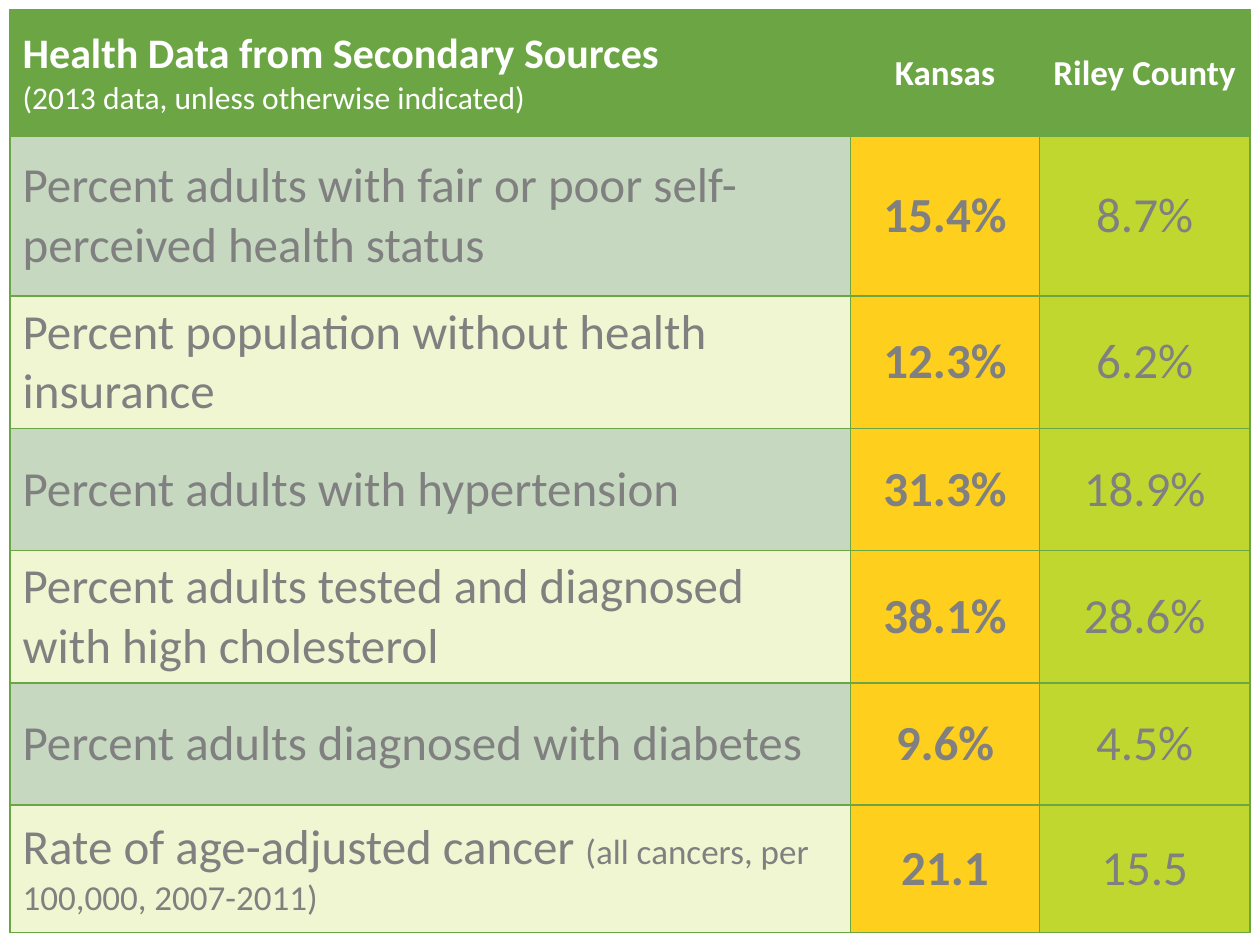
from lxml import etree
from pptx import Presentation
from pptx.dml.color import RGBColor
from pptx.enum.text import MSO_ANCHOR as ANCHOR, PP_ALIGN as ALIGN
from pptx.oxml.ns import qn
from pptx.util import Inches, Pt

GREEN = RGBColor(0x6C, 0xA6, 0x44)
SAGE = RGBColor(0xC7, 0xD8, 0xC1)
CREAM = RGBColor(0xF1, 0xF6, 0xD2)
GOLD = RGBColor(0xFF, 0xCF, 0x1D)
LIME = RGBColor(0xC0, 0xD7, 0x30)
GRAY = RGBColor(0x80, 0x80, 0x80)
WHITE = RGBColor(0xFF, 0xFF, 0xFF)

COLS = [6.67, 1.5, 1.67]
ROWS = [1, 1.27] + [0.97] * 4 + [1.01]
MARGIN = 0.08

HEADER = ["Health Data from Secondary Sources", "Kansas", "Riley County"]
HEADER_NOTE = "(2013 data, unless otherwise indicated)"
MEASURES = [
    ["Percent adults with fair or poor self- perceived health status", "15.4%", "8.7%"],
    ["Percent population without health insurance", "12.3%", "6.2%"],
    ["Percent adults with hypertension", "31.3%", "18.9%"],
    ["Percent adults tested and diagnosed with high cholesterol", "38.1%", "28.6%"],
    ["Percent adults diagnosed with diabetes", "9.6%", "4.5%"],
    ["Rate of age-adjusted cancer ", "21.1", "15.5"],
]
CANCER_NOTE = "(all cancers, per 100,000, 2007-2011)"


def set_font(p, size, color, bold):
    p.font.name = "Calibri"
    p.font.size = Pt(size)
    p.font.color.rgb = color
    p.font.bold = bold


def set_borders(cell, color, width):
    tc_pr = cell._tc.get_or_add_tcPr()
    for i, side in enumerate(["lnL", "lnR", "lnT", "lnB"]):
        ln = etree.Element(qn(f"a:{side}"), w=str(Pt(width)))
        fill = etree.SubElement(ln, qn("a:solidFill"))
        etree.SubElement(fill, qn("a:srgbClr"), val=str(color))
        tc_pr.insert(i, ln)


prs = Presentation()
prs.slide_width, prs.slide_height = Inches(10), Inches(7.5)
slide = prs.slides.add_slide(prs.slide_layouts[6])

table = slide.shapes.add_table(
    len(ROWS), len(COLS), Inches(MARGIN), Inches(MARGIN),
    Inches(sum(COLS)), Inches(sum(ROWS))).table
for col, width in zip(table.columns, COLS):
    col.width = Inches(width)
for row, height in zip(table.rows, ROWS):
    row.height = Inches(height)

for r, texts in enumerate([HEADER] + MEASURES):
    for c, text in enumerate(texts):
        cell = table.cell(r, c)
        cell.vertical_anchor = ANCHOR.MIDDLE
        cell.fill.solid()
        p = cell.text_frame.paragraphs[0]
        p.add_run().text = text
        p.alignment = ALIGN.CENTER if c else ALIGN.LEFT
        if r == 0:
            cell.fill.fore_color.rgb = GREEN
            set_font(p, 20 if c else 24, WHITE, True)
        else:
            band = SAGE if r % 2 else CREAM
            cell.fill.fore_color.rgb = [band, GOLD, LIME][c]
            set_font(p, 28, GRAY, c == 1)
        set_borders(cell, GREEN, 1)

p = table.cell(0, 0).text_frame.add_paragraph()
p.text = HEADER_NOTE
set_font(p, 18, WHITE, False)

run = table.cell(len(MEASURES), 0).text_frame.paragraphs[0].add_run()
run.text = CANCER_NOTE
run.font.size = Pt(20)

prs.save("out.pptx")
